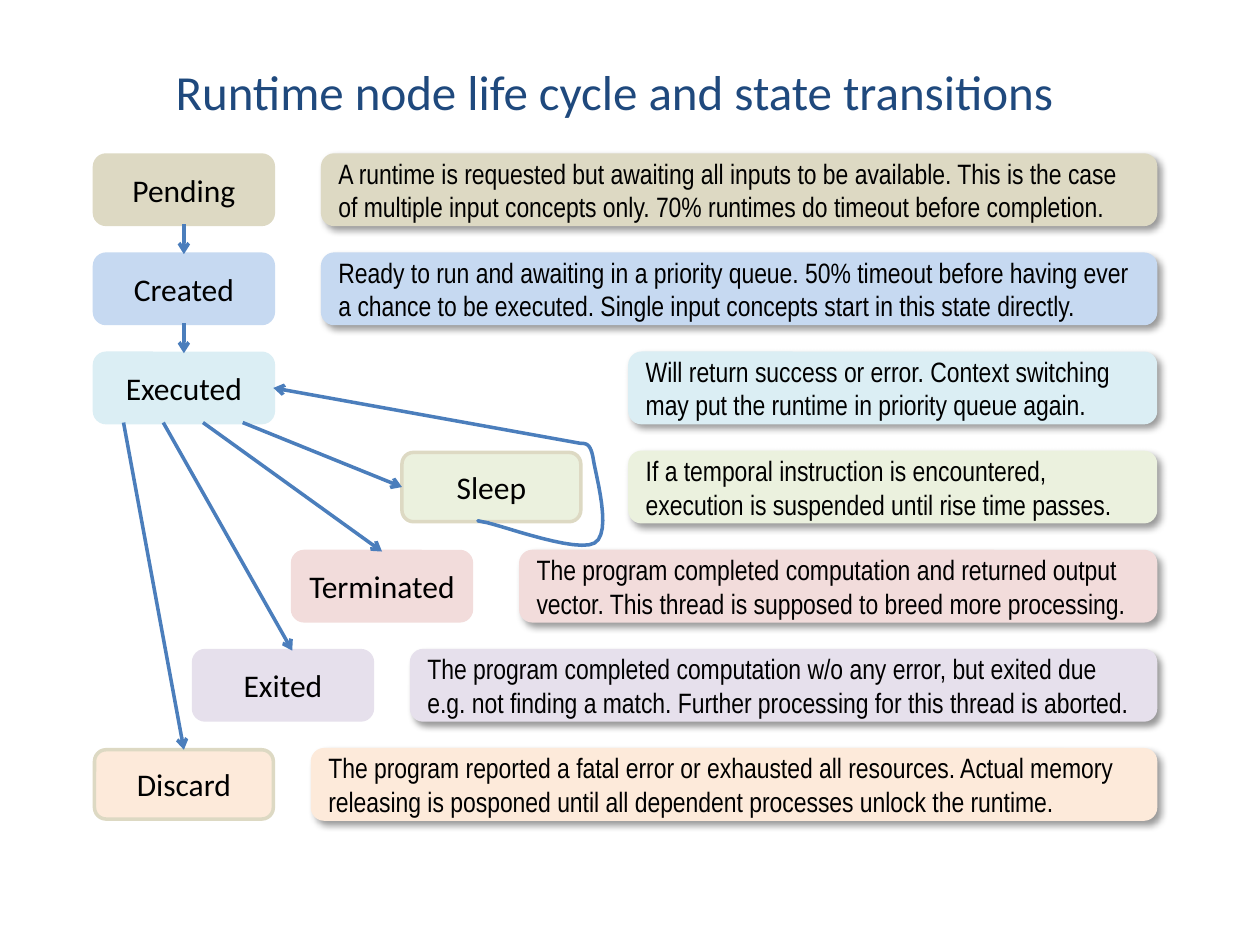
from lxml import etree
from pptx import Presentation
from pptx.dml.color import RGBColor
from pptx.enum import shapes, text
from pptx.oxml import parse_xml
from pptx.oxml.ns import qn
from pptx.util import Pt

NAVY = RGBColor(0x1F, 0x49, 0x7D)
BLUE = RGBColor(0x4B, 0x7E, 0xBC)
BLACK = RGBColor(0, 0, 0)
TAN = RGBColor(0xDD, 0xD9, 0xC3)
SKY = RGBColor(0xC6, 0xD9, 0xF1)
AQUA = RGBColor(0xDB, 0xEE, 0xF4)
GREEN = RGBColor(0xEB, 0xF1, 0xDE)
ROSE = RGBColor(0xF2, 0xDC, 0xDB)
LILAC = RGBColor(0xE6, 0xE0, 0xEC)
PEACH = RGBColor(0xFD, 0xEA, 0xDA)

TOP, PITCH = 88.6, 56.64
STATE_WIDTH, BOX_HEIGHT = 102.2, 39.6
RIGHT_EDGE = 660.3
TOP_SIDE, LEFT_SIDE, BOTTOM_SIDE, RIGHT_SIDE = range(4)

STATES = [
    ("Pending", 54, TAN, TAN, 184.4,
     "A runtime is requested but awaiting all inputs to be available. This is the case "
     "of multiple input concepts only. 70% runtimes do timeout before completion."),
    ("Created", 54, SKY, SKY, 184.4,
     "Ready to run and awaiting in a priority queue. 50% timeout before having ever "
     "a chance to be executed. Single input concepts start in this state directly."),
    ("Executed", 54, AQUA, AQUA, 360,
     "Will return success or error. Context switching may put the runtime in priority "
     "queue again."),
    ("Sleep", 229.7, GREEN, TAN, 360,
     "If a temporal instruction is encountered, execution is suspended until rise time "
     "passes."),
    ("Terminated", 167.2, ROSE, ROSE, 297.6,
     "The program completed computation and returned output vector. This thread is "
     "supposed to breed more processing."),
    ("Exited", 110.6, LILAC, LILAC, 235.2,
     "The program completed computation w/o any error, but exited due e.g. not finding "
     "a match. Further processing for this thread is aborted."),
    ("Discard", 54, PEACH, TAN, 178.6,
     "The program reported a fatal error or exhausted all resources. Actual memory "
     "releasing is posponed until all dependent processes unlock the runtime."),
]

LOOP_START = (332, 253.4)
LOOP_CURVES = [
    ((334.8, 253.4), (337.7, 253.4), (339.1, 262.8)),
    ((340.6, 272.2), (349.9, 304.6), (339.8, 310.3)),
    ((329.8, 316.1), (288.7, 301), (278.6, 298.8)),
    ((268.6, 296.6), (274.3, 298.1), (279.4, 298.8)),
]

SHADOW = (
    '<a:effectLst xmlns:a="http://schemas.openxmlformats.org/drawingml/2006/main">'
    '<a:outerShdw blurRad="50800" dist="38100" dir="2700000" algn="tl" rotWithShape="0">'
    '<a:srgbClr val="000000"><a:alpha val="40000"/></a:srgbClr>'
    '</a:outerShdw></a:effectLst>'
)


def style_text(paragraph, font_name, size, color, align):
    paragraph.alignment = align
    for run in paragraph.runs:
        run.font.name = font_name
        run.font.size = Pt(size)
        run.font.color.rgb = color


def place_title(slide, left, top, width, height):
    title = slide.shapes.title
    title.left, title.top, title.width, title.height = map(Pt, (left, top, width, height))
    frame = title.text_frame
    frame.text = "Runtime node life cycle and state transitions"
    frame.word_wrap = False
    frame.auto_size = text.MSO_AUTO_SIZE.NONE
    frame.vertical_anchor = text.MSO_ANCHOR.MIDDLE
    style_text(frame.paragraphs[0], "Calibri", 28, NAVY, text.PP_ALIGN.CENTER)


def add_box(slide, left, top, width, wording, fill, border, font_name, size, align):
    box = slide.shapes.add_shape(
        shapes.MSO_SHAPE.ROUNDED_RECTANGLE, *map(Pt, (left, top, width, BOX_HEIGHT)))
    box.shadow.inherit = False
    box.fill.solid()
    box.fill.fore_color.rgb = fill
    box.line.color.rgb = border
    box.line.width = Pt(2)
    frame = box.text_frame
    frame.text = wording
    frame.word_wrap = True
    frame.vertical_anchor = text.MSO_ANCHOR.MIDDLE
    style_text(frame.paragraphs[0], font_name, size, BLACK, align)
    return box


def add_description(slide, left, top, wording, fill):
    description = add_box(slide, left, top, RIGHT_EDGE - left, wording, fill, fill,
                          "Arial Narrow", 16, text.PP_ALIGN.LEFT)
    properties = description._element.spPr
    properties.replace(properties.find(qn("a:effectLst")), parse_xml(SHADOW))


def add_arrow(slide, start=(0, 0), end=(0, 0), source=None, target=None):
    arrow = slide.shapes.add_connector(
        shapes.MSO_CONNECTOR.STRAIGHT, *map(Pt, (*start, *end)))
    if source:
        arrow.begin_connect(*source)
    if target:
        arrow.end_connect(*target)
    arrow.line.color.rgb = BLUE
    arrow.line.width = Pt(2)
    etree.SubElement(arrow.line._get_or_add_ln(), qn("a:tailEnd"), type="arrow")
    etree.SubElement(arrow._element.spPr, qn("a:effectLst"))


def curve_points(start, curves, steps=12):
    for first, second, end in curves:
        for step in range(1, steps + 1):
            t = step / steps
            weights = ((1 - t) ** 3, 3 * t * (1 - t) ** 2, 3 * t * t * (1 - t), t ** 3)
            corners = (start, first, second, end)
            yield tuple(Pt(sum(w * corner[axis] for w, corner in zip(weights, corners)))
                        for axis in (0, 1))
        start = end


def add_wake_loop(slide, executed):
    add_arrow(slide, start=LOOP_START, target=(executed, RIGHT_SIDE))
    builder = slide.shapes.build_freeform(*map(Pt, LOOP_START))
    builder.add_line_segments(list(curve_points(LOOP_START, LOOP_CURVES)), close=False)
    loop = builder.convert_to_shape()
    loop.shadow.inherit = False
    loop.fill.background()
    loop.line.color.rgb = BLUE
    loop.line.width = Pt(2)


def add_transitions(slide, states):
    executed = states["Executed"]
    for source, target in (("Pending", "Created"), ("Created", "Executed")):
        add_arrow(slide, source=(states[source], BOTTOM_SIDE), target=(states[target], TOP_SIDE))
    exits = [(70.6 + 22.7 * i, TOP + 2 * PITCH + BOX_HEIGHT) for i in range(4)]
    add_arrow(slide, exits[0], target=(states["Discard"], TOP_SIDE))
    add_arrow(slide, exits[1], (167, TOP + 5 * PITCH))
    add_arrow(slide, exits[2], target=(states["Terminated"], TOP_SIDE))
    add_arrow(slide, exits[3], target=(states["Sleep"], LEFT_SIDE))
    add_wake_loop(slide, executed)


def add_life_cycle(slide, top, pitch):
    states = {}
    for row, (name, left, fill, border, _, _) in enumerate(STATES):
        states[name] = add_box(slide, left, top + row * pitch, STATE_WIDTH, name, fill,
                               border, "Calibri", 18, text.PP_ALIGN.CENTER)
    add_transitions(slide, states)
    for row, (_, _, fill, _, left, meaning) in enumerate(STATES):
        add_description(slide, left, top + row * pitch, meaning, fill)


def main():
    deck = Presentation()
    deck.slide_width, deck.slide_height = Pt(720), Pt(540)
    slide = deck.slides.add_slide(deck.slide_layouts[5])
    place_title(slide, 90, 31.7, 522, 41)
    add_life_cycle(slide, TOP, PITCH)
    deck.save("out.pptx")


if __name__ == "__main__":
    main()
